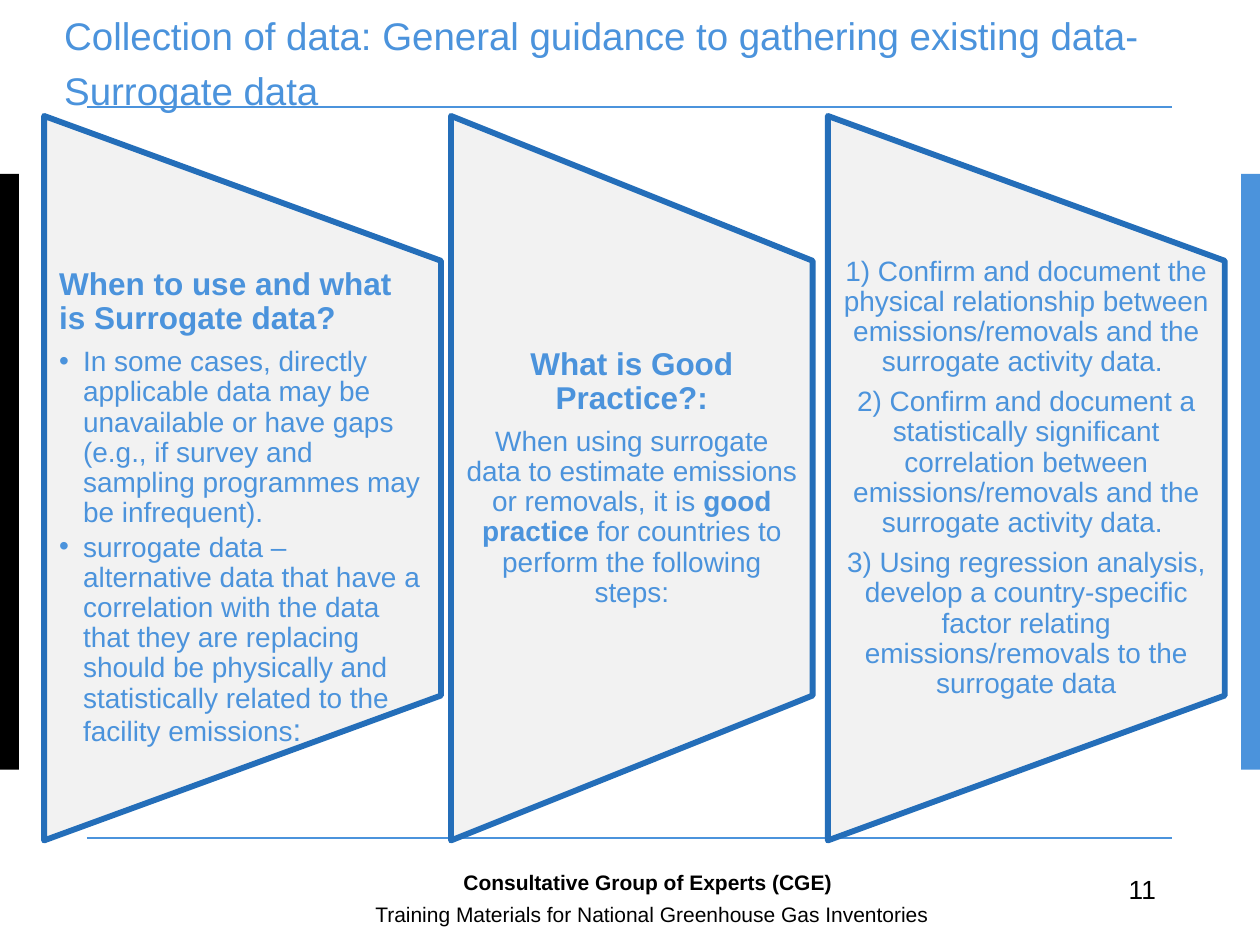
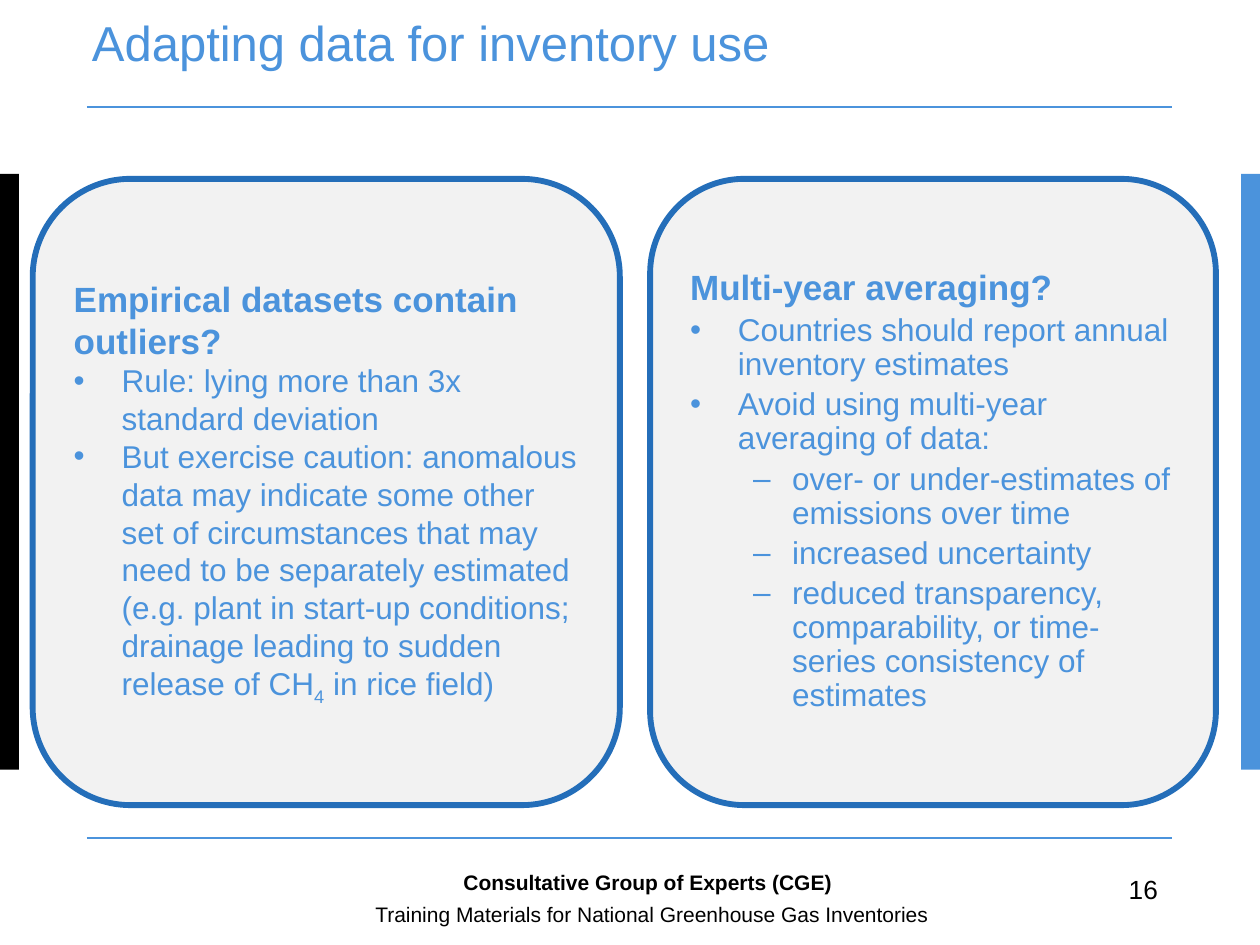
"""Build two slides on surrogate data and on adapting data for an inventory."""
from dataclasses import dataclass

import pptx
import pptx.dml.color
import pptx.enum.shapes
import pptx.enum.text
import pptx.oxml.ns
import pptx.util
from lxml import etree

Inches, Pt = pptx.util.Inches, pptx.util.Pt
ALIGN = pptx.enum.text.PP_ALIGN
ANCHOR = pptx.enum.text.MSO_ANCHOR
SHAPE = pptx.enum.shapes.MSO_SHAPE
qn = pptx.oxml.ns.qn

FONT = "Arial"
SKY, NAVY, PALE, BLACK = "4B93DC", "246EB9", "F2F2F2", "000000"
BAND_TOP, BAND_WIDTH, BAND_HEIGHT = 1.38, 0.15, 4.73
RULE_LEFT, RULE_RIGHT = 0.69, 9.3
TITLE_HEIGHT = 0.92
BREAK = "\n"


@dataclass
class Piece:
    """A run of text that differs from the rest of its paragraph."""
    text: str
    size: float = None
    bold: bool = None
    baseline: int = None


@dataclass
class Para:
    """A paragraph with its type, bullet and spacing."""
    pieces: list
    size: float
    color: str = SKY
    bold: bool = False
    align: int = ALIGN.LEFT
    bullet: str = ""
    left: float = 0
    hang: float = 0
    before: float = 0
    after: float = 0
    leading: object = 1.0


def rgb(hex_color):
    """Turn a hex string into a colour."""
    return pptx.dml.color.RGBColor.from_string(hex_color)


def add_bullet(paragraph, para):
    """Give the paragraph its hanging indent and bullet character."""
    properties = paragraph._p.get_or_add_pPr()
    properties.set("marL", str(Inches(para.left)))
    properties.set("indent", str(-Inches(para.hang)))
    etree.SubElement(properties, qn("a:buFont"), typeface=FONT)
    etree.SubElement(properties, qn("a:buChar"), char=para.bullet)


def add_piece(paragraph, piece, para):
    """Add one run, falling back on the paragraph's size and weight."""
    run = paragraph.add_run()
    run.text = piece.text
    run.font.name = FONT
    run.font.size = Pt(piece.size or para.size)
    run.font.bold = para.bold if piece.bold is None else piece.bold
    run.font.color.rgb = rgb(para.color)
    if piece.baseline:
        run._r.get_or_add_rPr().set("baseline", str(piece.baseline))


def write(frame, paras, anchor=ANCHOR.TOP, margins=(0.1, 0.05, 0.1, 0.05)):
    """Fill a text frame; margins are left, top, right, bottom."""
    frame.word_wrap = True
    frame.auto_size = pptx.enum.text.MSO_AUTO_SIZE.NONE
    frame.vertical_anchor = anchor
    (frame.margin_left, frame.margin_top,
     frame.margin_right, frame.margin_bottom) = map(Inches, margins)
    for index, para in enumerate(paras):
        paragraph = frame.add_paragraph() if index else frame.paragraphs[0]
        if para.bullet:
            add_bullet(paragraph, para)
        paragraph.alignment = para.align
        paragraph.line_spacing = para.leading
        paragraph.space_before = Pt(para.before if index else 0)
        paragraph.space_after = Pt(para.after)
        for piece in para.pieces:
            if piece == BREAK:
                paragraph.add_line_break()
            else:
                add_piece(paragraph, piece if isinstance(piece, Piece) else Piece(piece), para)


def paint(shape, fill, line=None):
    """Set a flat fill and an optional thick outline."""
    shape.shadow.inherit = False
    shape.fill.solid()
    shape.fill.fore_color.rgb = rgb(fill)
    if line:
        shape.line.color.rgb = rgb(line)
        shape.line.width = Pt(3.35)
    else:
        shape.line.fill.background()


def add_frame(slide):
    """Draw the side bands and the two horizontal rules."""
    for left, color in ((0, BLACK), (10 - BAND_WIDTH, SKY)):
        band = slide.shapes.add_shape(
            SHAPE.RECTANGLE, *map(Inches, (left, BAND_TOP, BAND_WIDTH, BAND_HEIGHT)))
        paint(band, color)
    for height in (0.85, 6.65):
        rule = slide.shapes.add_connector(
            pptx.enum.shapes.MSO_CONNECTOR.STRAIGHT,
            *map(Inches, (RULE_LEFT, height, RULE_RIGHT, height)))
        rule.line.color.rgb = rgb(SKY)
        rule.line.width = Pt(1)
        etree.SubElement(rule._element.spPr, qn("a:effectLst"))


def add_footer(slide, number):
    """Write the page number and the two footer lines."""
    for box, text, size, bold in (
            ((8.86, 6.88, 0.6, 0.35), number, 15, False),
            ((2.88, 7.11, 5.72, 0.2), "Training Materials for National Greenhouse Gas Inventories",
             12, False),
            ((3.58, 6.85, 3.39, 0.27), "Consultative Group of Experts (CGE)", 12, True)):
        footer = slide.shapes.add_textbox(*map(Inches, box))
        write(footer.text_frame, [Para([text], size, BLACK, bold)])


def start_slide(deck, title, left, width, size, leading, number):
    """Add a slide with its title, frame and footer."""
    slide = deck.slides.add_slide(deck.slide_layouts[5])
    add_frame(slide)
    heading = slide.shapes.title
    heading.left, heading.top = Inches(left), Inches(0)
    heading.width, heading.height = Inches(width), Inches(TITLE_HEIGHT)
    write(heading.text_frame, [Para([title], size, leading=leading)], ANCHOR.MIDDLE, (0, 0, 0, 0))
    add_footer(slide, number)
    return slide


def add_tapered_panel(slide, left, width, paras, anchor=ANCHOR.MIDDLE):
    """Draw a panel that narrows to the right and write in it."""
    top, height, taper = 0.92, 5.75, 1.15
    right, bottom = left + width, top + height
    corners = [(left, bottom), (left, top), (right, top + taper), (right, bottom - taper)]
    points = [(Inches(x), Inches(y)) for x, y in corners]
    builder = slide.shapes.build_freeform(*points[0])
    builder.add_line_segments(points[1:], close=True)
    panel = builder.convert_to_shape()
    paint(panel, PALE, NAVY)
    write(panel.text_frame, paras, anchor, (0.12, 1.21, 0.12, 1.21))


def add_rounded_panel(slide, left, width, paras):
    """Draw a rounded panel and write in it."""
    panel = slide.shapes.add_shape(
        SHAPE.ROUNDED_RECTANGLE, *map(Inches, (left, 1.42, width, 4.97)))
    paint(panel, PALE, NAVY)
    write(panel.text_frame, paras, ANCHOR.MIDDLE)


def build_surrogate_slide(deck):
    """Three tapered panels: when, good practice and steps."""
    slide = start_slide(
        deck, "Collection of data: General guidance to gathering existing data- Surrogate data",
        0.51, 9.4, 22, 1.2, "11")
    head = dict(size=18, bold=True, after=6.3, leading=0.9)
    point = dict(size=16, bullet="•", left=0.19, hang=0.19, after=2.4, leading=0.9)
    step = dict(size=16, align=ALIGN.CENTER, after=5.6, leading=0.9)
    add_tapered_panel(slide, 0.35, 3.15, [
        Para(["When to use and what is Surrogate data?"], **head),
        Para(["In some cases, directly applicable data may be unavailable or have gaps "
              "(e.g., if survey and sampling programmes may be infrequent)."], **point),
        Para(["surrogate data –", BREAK,
              "alternative data that have a correlation with the data that they are replacing "
              "should be physically and statistically related to the facility emissions",
              Piece(":", size=18)], **point),
    ], ANCHOR.TOP)
    add_tapered_panel(slide, 3.58, 2.87, [
        Para(["What is Good Practice?:"], align=ALIGN.CENTER, **head),
        Para(["When using surrogate data to estimate emissions or removals, it is ",
              Piece("good practice", bold=True),
              " for countries to perform the following steps:"], **step),
    ])
    steps = (
        "1) Confirm and document the physical relationship between emissions/removals "
        "and the surrogate activity data. ",
        "2) Confirm and document a statistically significant correlation between "
        "emissions/removals and the surrogate activity data. ",
        "3) Using regression analysis, develop a country-specific factor relating "
        "emissions/removals to the surrogate data",
    )
    add_tapered_panel(slide, 6.57, 3.15, [Para([text], **step) for text in steps])


def build_adapting_slide(deck):
    """Two rounded panels: outliers and multi-year averaging."""
    slide = start_slide(deck, "Adapting data for inventory use", 0.73, 8.52, 28, Pt(15), "16")
    point = dict(size=18, bullet="•", left=0.38, hang=0.38)
    add_rounded_panel(slide, 0.26, 4.66, [
        Para(["Empirical datasets contain outliers?"], 20, bold=True),
        Para(["Rule: lying more than 3x standard deviation"], **point),
        Para(["But exercise caution: anomalous data may indicate some other set of circumstances "
              "that may need to be separately estimated (e.g. plant in start-up conditions; "
              "drainage leading to sudden release of CH",
              Piece("4", baseline=-25000), " in rice field)"], **point),
    ])
    tight = dict(before=3.6, leading=0.9)
    dash = dict(size=18, bullet="–", left=0.81, hang=0.31, **tight)
    advice = ("Countries should report annual inventory estimates",
              "Avoid using multi-year averaging of data:")
    effects = ("over- or under-estimates of emissions over time",
               "increased uncertainty",
               "reduced transparency, comparability, or time-series consistency of estimates")
    add_rounded_panel(
        slide, 5.16, 4.49,
        [Para(["Multi-year averaging?"], 20, bold=True, leading=0.9)]
        + [Para([text], **point, **tight) for text in advice]
        + [Para([text], **dash) for text in effects])


def main():
    """Build and save the deck."""
    deck = pptx.Presentation()
    deck.slide_width, deck.slide_height = Inches(10), Inches(7.5)
    build_surrogate_slide(deck)
    build_adapting_slide(deck)
    deck.save("out.pptx")


if __name__ == "__main__":
    main()
